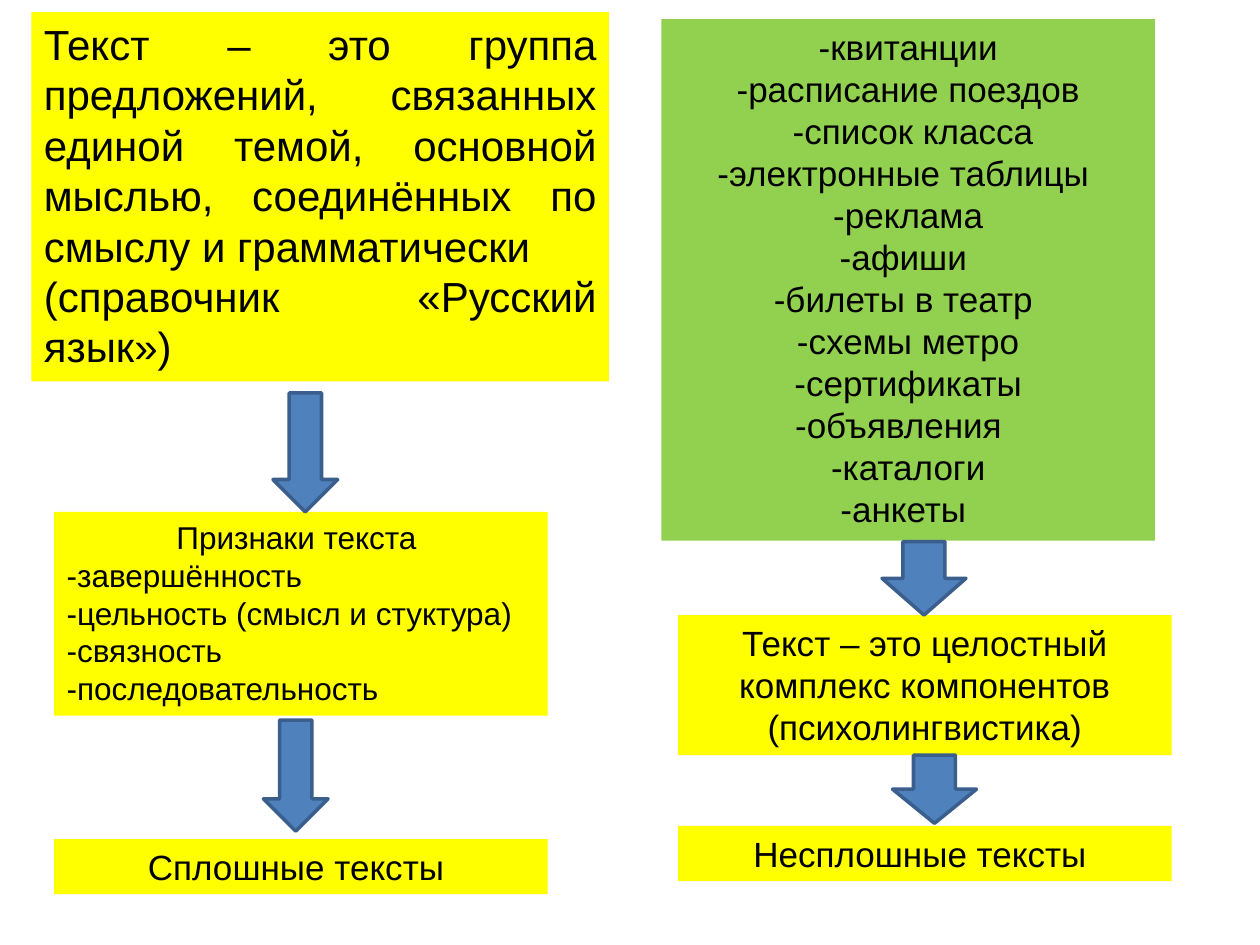
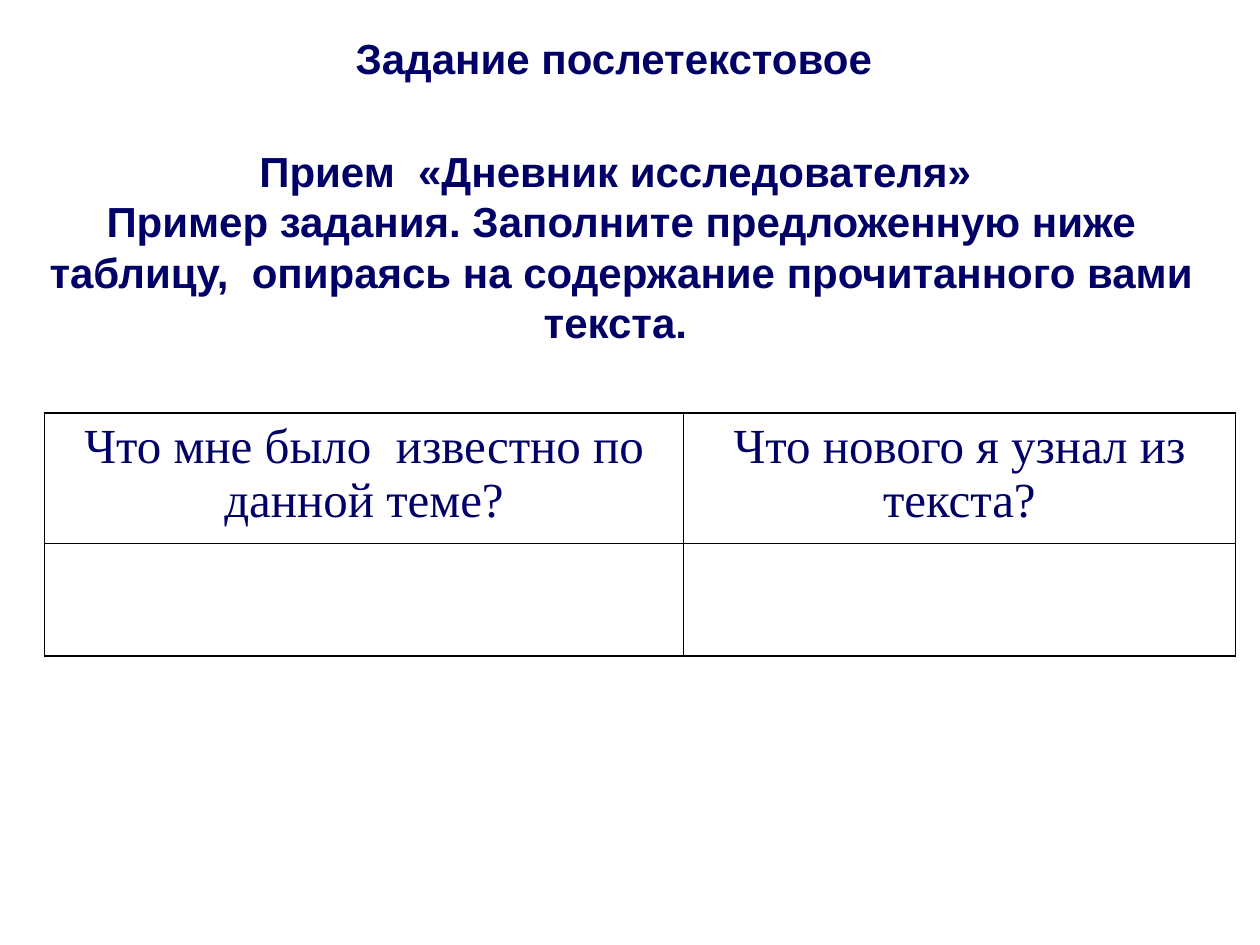
import pptx
import pptx.util
import pptx.dml.color
import pptx.enum.shapes
import pptx.enum.text
import pptx.oxml
import pptx.oxml.ns

Pt = pptx.util.Pt
ALIGN = pptx.enum.text.PP_ALIGN
HUES = {"yellow": "FFFF00", "green": "92D050", "blue": "4F81BD",
        "edge": "3A5F8C", "black": "000000", "navy": "000066"}


def hue(name):
    return pptx.dml.color.RGBColor.from_string(HUES[name])


def write(frame, lines, look, aligns):
    """Fill a frame; the last alignment given serves all further lines."""
    frame.word_wrap = True
    frame.auto_size = pptx.enum.text.MSO_AUTO_SIZE.NONE
    frame.vertical_anchor = pptx.enum.text.MSO_ANCHOR.TOP
    frame.text = "\n".join(lines)
    for i, para in enumerate(frame.paragraphs):
        para.alignment = aligns[min(i, len(aligns) - 1)]
        para.space_before = Pt(0)
        for run in para.runs:
            for key, value in look.items():
                if key == "color":
                    run.font.color.rgb = hue(value)
                else:
                    setattr(run.font, key, value)


deck = pptx.Presentation()
deck.slide_width, deck.slide_height = Pt(720), Pt(540)

# Slide 1: two chains of boxes
slide = deck.slides.add_slide(deck.slide_layouts[6])
mid, full = [ALIGN.CENTER], [ALIGN.JUSTIFY]
left, right, wide = 31, 387.5, 282
boxes = [
    (18, 7, 330, 211, "yellow", 24, full,
     ["Текст – это группа предложений, связанных единой темой, основной "
      "мыслью, соединённых по смыслу и грамматически",
      "(справочник «Русский язык»)"]),
    (left, 292.5, wide, 116.5, "yellow", 18, mid + full,
     ["Признаки текста ", "-завершённость", "-цельность (смысл и стуктура) ",
      "-связность", "-последовательность "]),
    (left, 479.5, wide, 31.5, "yellow", 20, mid, ["Сплошные тексты "]),
    (378, 11, wide, 298, "green", 20, mid,
     ["-квитанции", "-расписание поездов", " -список класса",
      "-электронные таблицы ", "-реклама", "-афиши ", "-билеты в театр ",
      "-схемы метро", "-сертификаты", "-объявления  ", "-каталоги",
      "-анкеты "]),
    (right, 351.5, wide, 80, "yellow", 20, mid,
     ["Текст – это целостный комплекс компонентов (психолингвистика)"]),
    (right, 472, wide, 31.5, "yellow", 20, mid, ["Несплошные тексты "]),
]
for x, y, w, h, fill, size, aligns, lines in boxes:
    box = slide.shapes.add_textbox(Pt(x), Pt(y), Pt(w), Pt(h))
    box.fill.solid()
    box.fill.fore_color.rgb = hue(fill)
    look = {"name": "Arial", "size": Pt(size), "color": "black"}
    write(box.text_frame, lines, look, aligns)

arrows = [(156, 224.5, 37, 68), (150.5, 411.5, 37, 63.5),
          (504, 309.5, 48, 42), (510, 431.5, 48, 39)]
for x, y, w, h in arrows:
    arrow = slide.shapes.add_shape(
        pptx.enum.shapes.MSO_SHAPE.DOWN_ARROW, Pt(x), Pt(y), Pt(w), Pt(h))
    arrow.shadow.inherit = False
    arrow.fill.solid()
    arrow.fill.fore_color.rgb = hue("blue")
    arrow.line.color.rgb = hue("edge")
    arrow.line.width = Pt(2)

# Slide 2: task and table to fill in
slide = deck.slides.add_slide(deck.slide_layouts[1])
title, body = slide.placeholders
places = [(title, (196, 15, 318, 36)), (body, (0, 79.5, 710, 147.5))]
for shape, place in places:
    for key, value in zip(("left", "top", "width", "height"), place):
        setattr(shape, key, Pt(value))

look = {"name": "Arial", "size": Pt(24), "bold": True, "color": "navy"}
write(title.text_frame, ["Задание послетекстовое"], look, [ALIGN.LEFT])
write(body.text_frame,
      ["Прием  «Дневник исследователя» ",
       "Пример задания. Заполните предложенную ниже таблицу,  опираясь на "
       "содержание прочитанного вами текста. "], look, mid)
for para in body.text_frame.paragraphs:
    props = para._p.get_or_add_pPr()
    props.set("marL", "0")
    props.set("indent", "0")
    props.append(pptx.oxml.parse_xml(
        f'<a:buNone {pptx.oxml.ns.nsdecls("a")}/>'))

table = slide.shapes.add_table(
    2, 2, Pt(25.5), Pt(236), Pt(680.5), Pt(139)).table
table.first_row = table.horz_banding = False
for col, w in zip(table.columns, (365, 315.5)):
    col.width = Pt(w)
for row, h in zip(table.rows, (74.5, 64.5)):
    row.height = Pt(h)

look = {"name": "Times New Roman", "size": Pt(28), "color": "navy"}
heads = ["Что мне было  известно по данной теме?",
         "Что нового я узнал из текста?"]
for cell, head in zip(table.rows[0].cells, heads):
    write(cell.text_frame, [head], look, mid)
for cell in table.iter_cells():
    props = cell._tc.get_or_add_tcPr()
    for side in ("lnL", "lnR", "lnT", "lnB"):
        props.append(pptx.oxml.parse_xml(
            f'<a:{side} {pptx.oxml.ns.nsdecls("a")} w="{int(Pt(1))}">'
            f'<a:solidFill><a:srgbClr val="{HUES["black"]}"/></a:solidFill>'
            f'</a:{side}>'))
    cell.fill.background()

deck.save("out.pptx")
